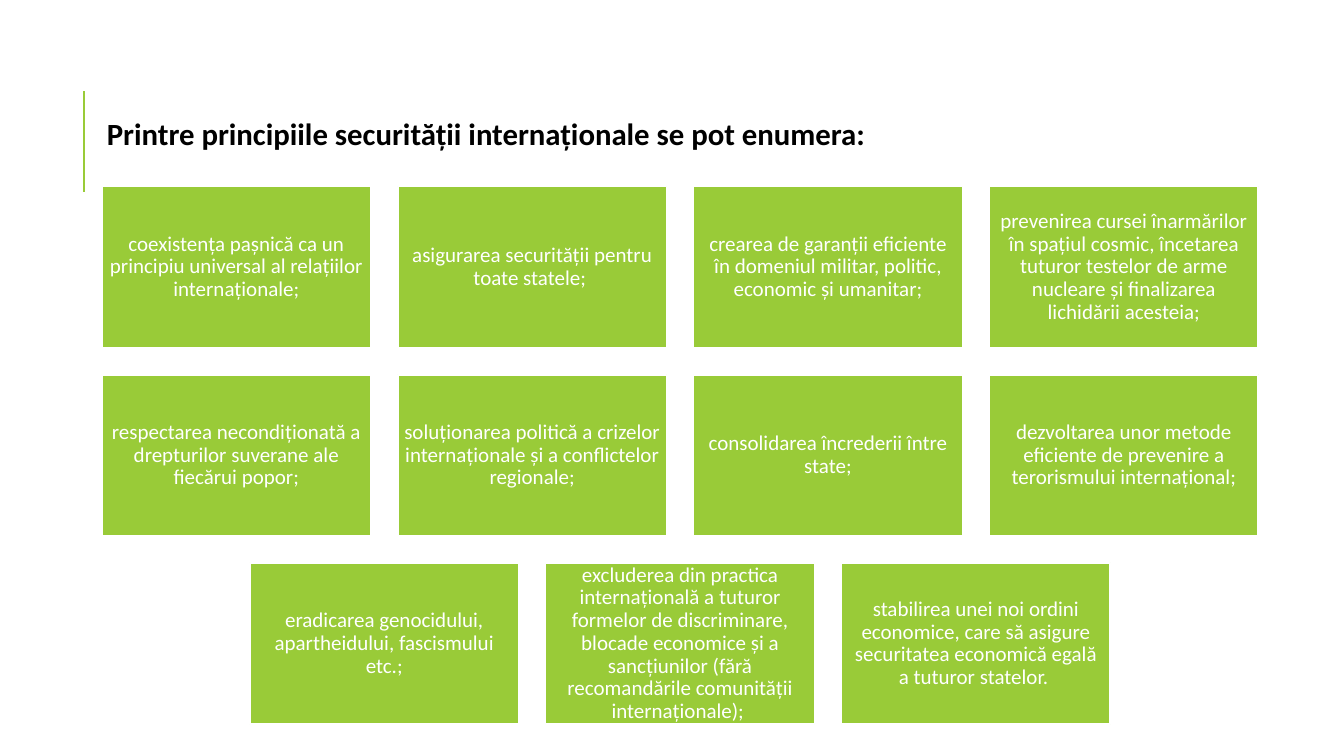
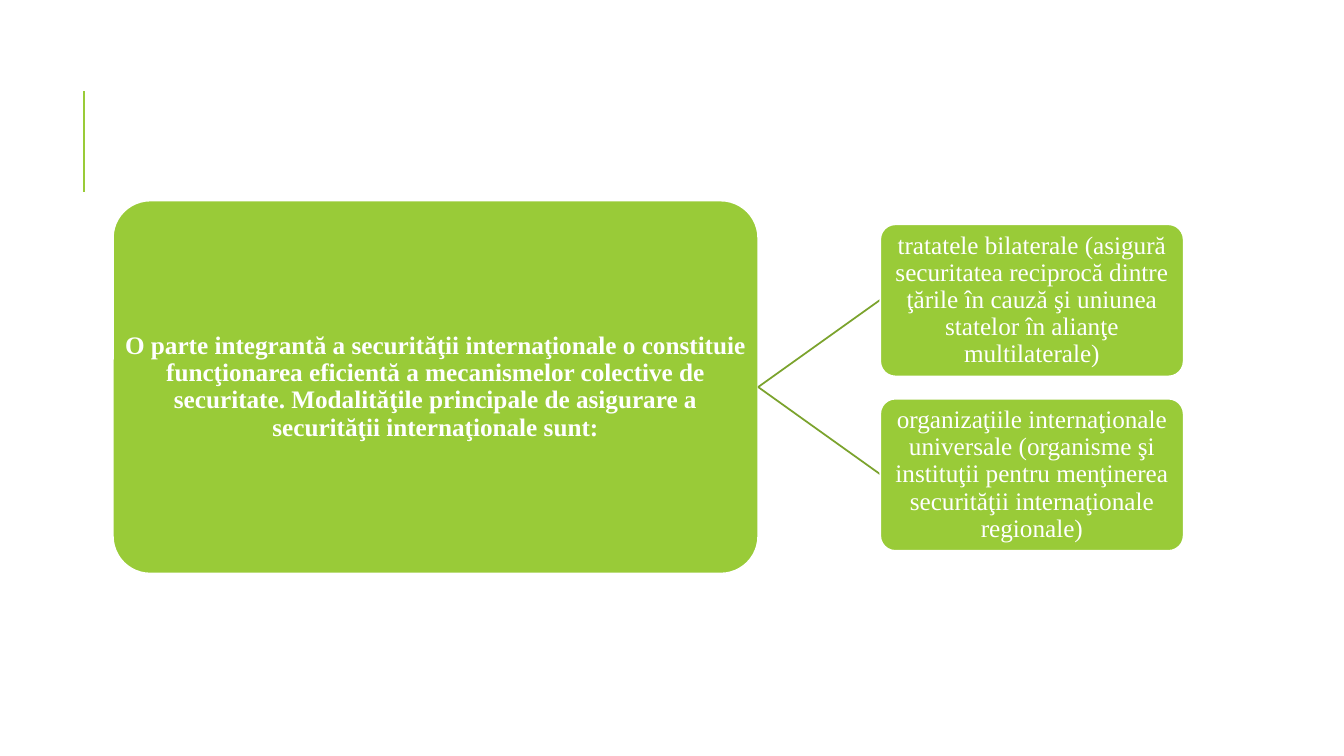
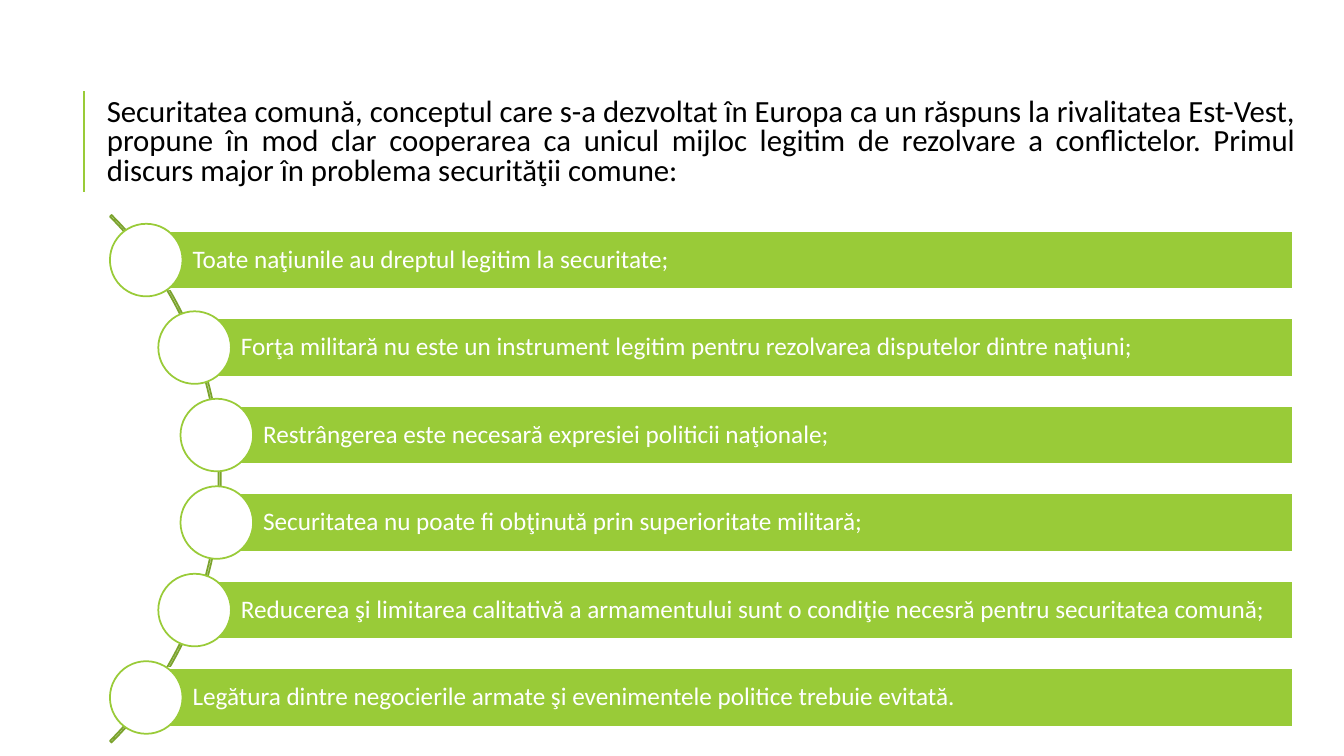
from lxml import etree
from pptx import Presentation
from pptx.dml.color import RGBColor
from pptx.enum.lang import MSO_LANGUAGE_ID
from pptx.enum.shapes import MSO_CONNECTOR, MSO_SHAPE
from pptx.enum.text import MSO_ANCHOR, PP_ALIGN
from pptx.oxml.ns import qn
from pptx.util import Inches, Pt

RECTANGLE, ROUNDED, OVAL = MSO_SHAPE.RECTANGLE, MSO_SHAPE.ROUNDED_RECTANGLE, MSO_SHAPE.OVAL
BLOCK_ARC = MSO_SHAPE.BLOCK_ARC
LEFT, CENTER, JUSTIFY = PP_ALIGN.LEFT, PP_ALIGN.CENTER, PP_ALIGN.JUSTIFY
MIDDLE, TOP = MSO_ANCHOR.MIDDLE, MSO_ANCHOR.TOP
STRAIGHT = MSO_CONNECTOR.STRAIGHT
ROMANIAN, ENGLISH = MSO_LANGUAGE_ID.ROMANIAN, MSO_LANGUAGE_ID.ENGLISH_US

color = RGBColor.from_string
GREEN, DARK_GREEN, WHITE, BLACK = "99CB38", "7BA32D", "FFFFFF", "000000"
SANS, SERIF = "Calibri", "Times New Roman"
MARGIN = 1.01
CONTENT_WIDTH = 11.47


def add_line(slide, x1, y1, x2, y2, stroke, weight):
    line = slide.shapes.add_connector(
        STRAIGHT, Inches(x1), Inches(y1), Inches(x2), Inches(y2))
    line.line.color.rgb = color(stroke)
    line.line.width = Pt(weight)
    etree.SubElement(line._element.spPr, qn("a:effectLst"))


def add_box(slide, kind, left, top, width, height, text="", size=18, font=SANS,
            bold=False, align=CENTER, inset=0.05, left_inset=None,
            fill=GREEN, stroke=WHITE, language=ENGLISH):
    shape = slide.shapes.add_shape(
        kind, Inches(left), Inches(top), Inches(width), Inches(height))
    shape.shadow.inherit = False
    if fill:
        shape.fill.solid()
        shape.fill.fore_color.rgb = color(fill)
    else:
        shape.fill.background()
    shape.line.color.rgb = color(stroke)
    shape.line.width = Pt(1.25)
    if kind == ROUNDED:
        shape.adjustments[0] = 0.1
    if text:
        frame = shape.text_frame
        frame.word_wrap = True
        frame.vertical_anchor = MIDDLE
        frame.margin_top = frame.margin_bottom = frame.margin_right = Inches(inset)
        frame.margin_left = Inches(inset if left_inset is None else left_inset)
        paragraph = frame.paragraphs[0]
        paragraph.text = text
        paragraph.runs[0].font.language_id = language
        paragraph.alignment = align
        paragraph.line_spacing = 0.9
        paragraph.font.size = Pt(size)
        paragraph.font.name = font
        paragraph.font.bold = bold
        paragraph.font.color.rgb = color(WHITE)
    return shape


presentation = Presentation()
presentation.slide_width = Inches(13.33)
presentation.slide_height = Inches(7.5)

# Shared frame: accent line and title
# (text, top, width, height, bold, alignment, spacing, language)
titles = [
    ("Printre principiile securităţii internaţionale se pot enumera:",
     1.13, CONTENT_WIDTH, 0.56, True, LEFT, 0.9, ROMANIAN),
    None,
    ("Securitatea comună, conceptul care s-a dezvoltat în Europa ca un răspuns la "
     "rivalitatea Est-Vest, propune în mod clar cooperarea ca unicul mijloc legitim de "
     "rezolvare a conflictelor. Primul discurs major în problema securităţii comune: ",
     0.93, 11.89, 1.07, False, JUSTIFY, 0.8, ENGLISH),
]
for title in titles:
    slide = presentation.slides.add_slide(presentation.slide_layouts[6])
    add_line(slide, 0.83, 1.9, 0.83, 0.9, GREEN, 1.5)
    if title:
        text, top, width, height, bold, align, spacing, language = title
        box = slide.shapes.add_textbox(
            Inches(MARGIN), Inches(top), Inches(width), Inches(height))
        frame = box.text_frame
        frame.word_wrap = True
        frame.vertical_anchor = TOP
        frame.margin_left = frame.margin_right = Inches(0.05)
        frame.margin_top = frame.margin_bottom = Inches(0.05)
        paragraph = frame.paragraphs[0]
        paragraph.text = text
        paragraph.runs[0].font.language_id = language
        paragraph.alignment = align
        paragraph.line_spacing = spacing
        paragraph.font.size = Pt(22)
        paragraph.font.name = SANS
        paragraph.font.bold = bold
        paragraph.font.color.rgb = color(BLACK)
principles_slide, methods_slide, common_slide = presentation.slides

# Slide 1: grid of principles, each row centred
principle_rows = [
    ["coexistenţa paşnică ca un principiu universal al relaţiilor internaţionale;",
     "asigurarea securităţii pentru toate statele; ",
     "crearea de garanţii eficiente în domeniul militar, politic, economic şi umanitar;",
     "prevenirea cursei înarmărilor în spaţiul cosmic, încetarea tuturor testelor de arme "
     "nucleare şi finalizarea lichidării acesteia;"],
    ["respectarea necondiţionată a drepturilor suverane ale fiecărui popor;",
     "soluţionarea politică a crizelor internaţionale şi a conflictelor regionale;",
     "consolidarea încrederii între state;",
     "dezvoltarea unor metode eficiente de prevenire a terorismului internaţional;"],
    ["eradicarea genocidului, apartheidului, fascismului etc.;",
     "excluderea din practica internaţională a tuturor formelor de discriminare, blocade "
     "economice şi a sancţiunilor (fără recomandările comunităţii internaţionale); ",
     "stabilirea unei noi ordini economice, care să asigure securitatea economică egală "
     "a tuturor statelor. "],
]
card_width = CONTENT_WIDTH / 4.3  # four cards and three gaps of a tenth
card_height = 0.6 * card_width
gap = 0.1 * card_width
card_inset = 4.5 / 72  # 4.5 points
for row, principles in enumerate(principle_rows):
    row_left = MARGIN + (4 - len(principles)) * (card_width + gap) / 2
    for column, principle in enumerate(principles):
        add_box(principles_slide, RECTANGLE, row_left + column * (card_width + gap),
                1.85 + row * (card_height + gap), card_width, card_height,
                principle, size=15, inset=card_inset, language=ROMANIAN)

# Slide 2: statement branching into two methods
middle = 3.84
branch = 1.73 / 2
add_box(methods_slide, ROUNDED, 1.12, middle - 1.85, 6.4, 3.7,
        "O parte integrantă a securităţii internaţionale o constituie funcţionarea "
        "eficientă a mecanismelor colective de securitate. Modalităţile principale de "
        "asigurare a securităţii internaţionale sunt:",
        font=SERIF, bold=True, inset=0.01)
methods = [
    "tratatele bilaterale (asigură securitatea reciprocă dintre ţările în cauză şi "
    "uniunea statelor în alianţe multilaterale)",
    "organizaţiile internaţionale universale (organisme şi instituţii pentru menţinerea "
    "securităţii internaţionale regionale)",
]
for method, offset in zip(methods, (-branch, branch)):
    add_line(methods_slide, 7.52, middle, 8.73, middle + offset, DARK_GREEN, 1.25)
    add_box(methods_slide, ROUNDED, 8.73, middle + offset - 0.75, 3.01, 1.51,
            method, font=SERIF, inset=0.01)

# Slide 3: thin arc from -45 to 45 degrees, with bars starting on it
arc = add_box(common_slide, BLOCK_ARC, -5.21, 1.05, 7.4, 7.4, fill=None, stroke=DARK_GREEN)
for index, adjustment in enumerate((189, 27, 0.003)):
    arc.adjustments[index] = adjustment

theses = [
    (1.45, "Toate naţiunile au dreptul legitim la securitate;"),
    (1.93, "Forţa militară nu este un instrument legitim pentru rezolvarea disputelor "
           "dintre naţiuni;"),
    (2.15, "Restrângerea este necesară expresiei politicii naţionale;"),
    (2.15, "Securitatea nu poate fi obţinută prin superioritate militară;"),
    (1.93, "Reducerea şi limitarea calitativă a armamentului sunt o condiţie necesră "
           "pentru securitatea comună;"),
    (1.45, "Legătura dintre negocierile armate şi evenimentele politice trebuie evitată."),
]
first_top, last_top = 2.29, 6.63
bar_right, bar_height, dot = 12.82, 0.58, 0.72
bar_pitch = (last_top - first_top) / (len(theses) - 1)
for index, (bar_left, thesis) in enumerate(theses):
    top = first_top + index * bar_pitch
    add_box(common_slide, RECTANGLE, bar_left, top, bar_right - bar_left, bar_height,
            thesis, align=LEFT, left_inset=0.46)
    add_box(common_slide, OVAL, bar_left - dot / 2, top + (bar_height - dot) / 2, dot, dot,
            fill=WHITE, stroke=GREEN)

presentation.save("out.pptx")
